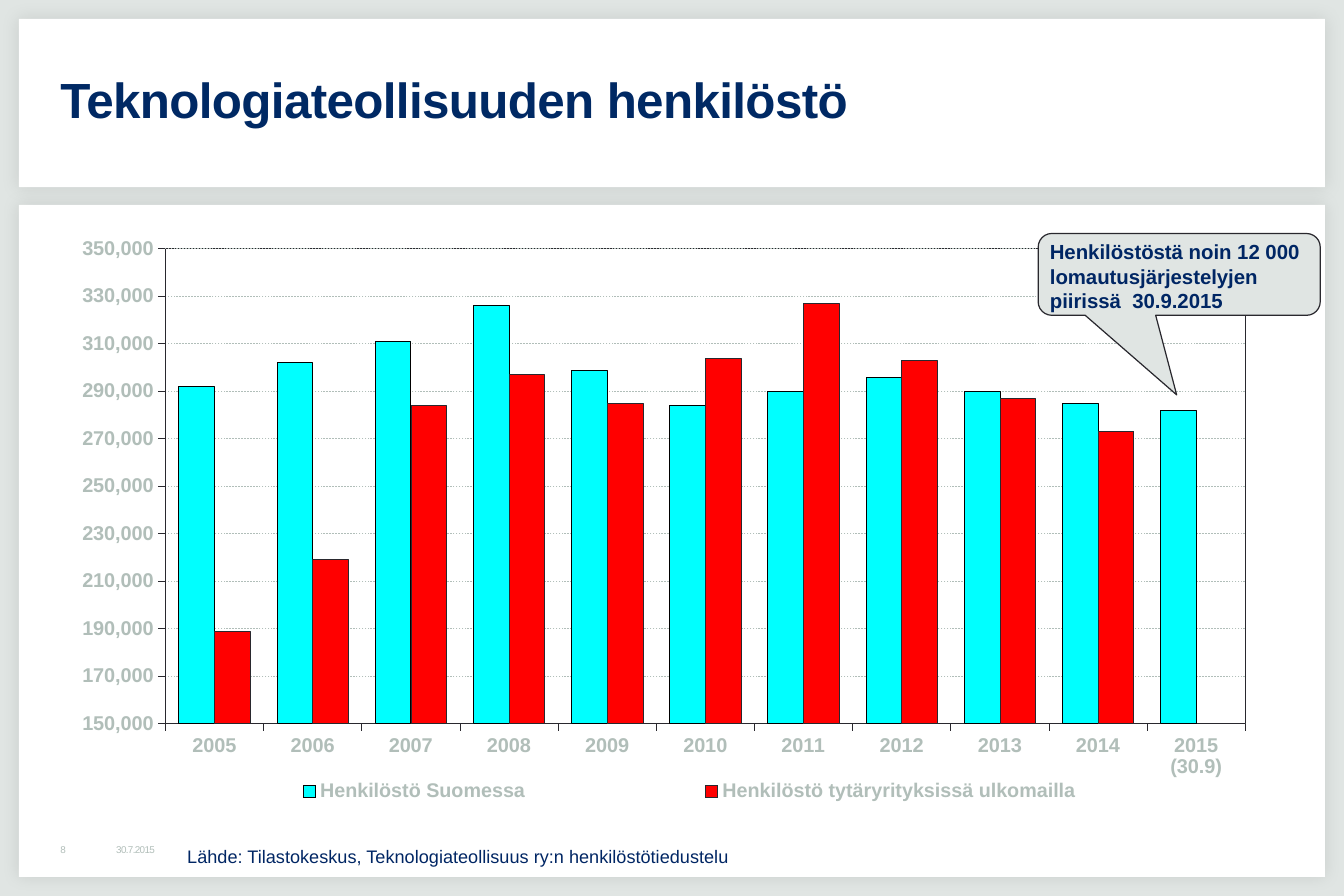
from lxml import etree
from pptx import Presentation
from pptx.chart.data import CategoryChartData
from pptx.dml.color import RGBColor
from pptx.enum.chart import XL_CHART_TYPE, XL_LEGEND_POSITION, XL_TICK_MARK
from pptx.enum.dml import MSO_LINE
from pptx.enum.shapes import MSO_SHAPE
from pptx.enum.text import MSO_ANCHOR, MSO_AUTO_SIZE, PP_ALIGN
from pptx.oxml import parse_xml
from pptx.oxml.ns import nsdecls, qn
from pptx.util import Inches, Pt

RECT = MSO_SHAPE.RECTANGLE
BUBBLE = MSO_SHAPE.ROUNDED_RECTANGULAR_CALLOUT
COLUMNS = XL_CHART_TYPE.COLUMN_CLUSTERED
BOTTOM = XL_LEGEND_POSITION.BOTTOM
OUT, NONE = XL_TICK_MARK.OUTSIDE, XL_TICK_MARK.NONE
DASH = MSO_LINE.DASH
TOP, MIDDLE = MSO_ANCHOR.TOP, MSO_ANCHOR.MIDDLE
FIXED, GROW = MSO_AUTO_SIZE.NONE, MSO_AUTO_SIZE.SHAPE_TO_FIT_TEXT
LEFT = PP_ALIGN.LEFT

FONT = "Arial"
COLORS = {
    "back": "E0E5E3", "panel": "FFFFFF", "title": "002964", "text": "002664",
    "muted": "B1BEB9", "line": "29282E", "black": "000000",
    "home": "00FFFF", "abroad": "FF0000",
}
YEARS = [str(year) for year in range(2005, 2015)] + ["2015 (30.9)"]
STAFF = [
    ("Henkilöstö Suomessa", "home", "black",
     [292, 302, 311, 326, 299, 284, 290, 296, 290, 285, 282]),
    ("Henkilöstö tytäryrityksissä ulkomailla", "abroad", "line",
     [189, 219, 284, 297, 285, 304, 327, 303, 287, 273, None]),
]


def color(name):
    return RGBColor.from_string(COLORS[name])


def inches(box):
    return [Inches(side) for side in box]


def style(font, size, name, bold=False):
    font.name, font.size, font.bold = FONT, Pt(size), bold
    font.color.rgb = color(name)


def stroke(line, name, width):
    line.color.rgb = color(name)
    line.width = Pt(width)


def write(frame, lines, size, name, bold=False, pads=(0.1, 0.05, 0.1, 0.05),
          anchor=TOP, fit=FIXED, track=0):
    frame.word_wrap = True
    frame.auto_size = fit
    frame.vertical_anchor = anchor
    (frame.margin_left, frame.margin_top,
     frame.margin_right, frame.margin_bottom) = inches(pads)
    for i, line in enumerate(lines):
        para = frame.add_paragraph() if i else frame.paragraphs[0]
        para.alignment = LEFT
        run = para.add_run()
        run.text = line
        style(run.font, size, name, bold)
        if track:
            run.font._element.set("spc", str(track))


def add_panel(slide, box):
    panel = slide.shapes.add_shape(RECT, *inches(box))
    panel.fill.solid()
    panel.fill.fore_color.rgb = color("panel")
    panel.line.fill.background()
    panel.shadow.inherit = False
    glow = panel._element.spPr.find(qn("a:effectLst"))
    glow.append(parse_xml(
        f'<a:outerShdw {nsdecls("a")} blurRad="127000" dist="0" dir="2700000">'
        f'<a:srgbClr val="{COLORS["black"]}"><a:alpha val="10000"/></a:srgbClr>'
        '</a:outerShdw>'))


def add_title(slide, box):
    title = slide.shapes.title
    title.left, title.top, title.width, title.height = inches(box)
    write(title.text_frame, ["Teknologiateollisuuden henkilöstö"], 30, "title",
          True, (0.04, 0.05, 0.1, 0.05), MIDDLE, track=-40)
    title.text_frame.paragraphs[0].line_spacing = 0.95
    slide.shapes._spTree.append(title._element)


def set_place(parent, index, box, inner=False):
    for old in parent.findall(qn("c:layout")):
        parent.remove(old)
    layout = etree.Element(qn("c:layout"))
    manual = etree.SubElement(layout, qn("c:manualLayout"))
    parts = [("layoutTarget", "inner")] if inner else []
    parts += [("xMode", "edge"), ("yMode", "edge")]
    parts += zip("xywh", box)
    for tag, value in parts:
        etree.SubElement(manual, qn(f"c:{tag}")).set("val", str(value))
    parent.insert(index, layout)


def add_chart(slide, box):
    data = CategoryChartData(number_format="#,##0")
    data.categories = YEARS
    for name, _, _, counts in STAFF:
        data.add_series(name, [n and n * 1000 for n in counts])
    chart = slide.shapes.add_chart(COLUMNS, *inches(box), data).chart
    chart.has_title = False
    style(chart.font, 12.1, "line", True)
    plot = chart.plots[0]
    plot.gap_width, plot.overlap = 75, 0
    plot.vary_by_categories = False
    for series, (_, fill, edge, _) in zip(plot.series, STAFF):
        series.format.fill.solid()
        series.format.fill.fore_color.rgb = color(fill)
        stroke(series.format.line, edge, 0.25)
        series.invert_if_negative = False
    for axis in (chart.category_axis, chart.value_axis):
        axis.major_tick_mark, axis.minor_tick_mark = OUT, NONE
        style(axis.tick_labels.font, 12.1, "muted", True)
        stroke(axis.format.line, "line", 0.25)
    scale = chart.value_axis
    scale.minimum_scale, scale.maximum_scale = 150000, 350000
    scale.major_unit = 20000
    scale.tick_labels.number_format = "#,##0"
    scale.tick_labels.number_format_is_linked = False
    scale.has_major_gridlines = True
    grid = scale.major_gridlines.format.line
    stroke(grid, "muted", 0.25)
    grid.dash_style = DASH
    chart.has_legend = True
    legend = chart.legend
    legend.position = BOTTOM
    legend.include_in_layout = False
    style(legend.font, 12, "muted", True)
    set_place(legend._element, 1, (0.06, 0.94, 0.91, 0.05))
    area = chart._chartSpace.chart.plotArea
    set_place(area, 0, (0.089, 0.042, 0.877, 0.808), True)
    area.append(parse_xml(
        f'<c:spPr {nsdecls("c", "a")}><a:noFill/><a:ln w="3175"><a:solidFill>'
        f'<a:srgbClr val="{COLORS["line"]}"/></a:solidFill></a:ln></c:spPr>'))


def add_note(slide, box):
    left, top, width, height = box
    note = slide.shapes.add_shape(BUBBLE, *inches(box))
    for i, value in enumerate((-0.009, 1.473, 0.167)):
        note.adjustments[i] = value
    note.fill.solid()
    note.fill.fore_color.rgb = color("back")
    stroke(note.line, "line", 0.75)
    note.shadow.inherit = False
    label = slide.shapes.add_textbox(
        *inches((left, top, width + 0.23, height + 0.04)))
    write(label.text_frame,
          ["Henkilöstöstä noin 12 000", "lomautusjärjestelyjen",
           "piirissä  30.9.2015"], 12.4, "text", True, fit=GROW)


def add_foot(slide, box):
    left, top, width, height = box
    pads = (0.04,) * 4
    for shift, span, text in ((0, 0.47, "8"), (0.47, 1.42, "30.7.2015")):
        mark = slide.shapes.add_textbox(
            *inches((left + shift, top, span, 0.16)))
        write(mark.text_frame, [text], 6, "muted", pads=pads,
              anchor=MIDDLE, track=-40)
    source = slide.shapes.add_textbox(
        *inches((left + 1.03, top, width - 1.03, height)))
    write(source.text_frame,
          ["Lähde: Tilastokeskus, Teknologiateollisuus ry:n henkilöstötiedustelu"],
          11, "text", pads=(0.08, 0.04, 0.08, 0.04), fit=GROW)


def main():
    deck = Presentation()
    deck.slide_width, deck.slide_height = Inches(11.34), Inches(7.56)
    slide = deck.slides.add_slide(deck.slide_layouts[5])
    slide.background.fill.solid()
    slide.background.fill.fore_color.rgb = color("back")
    add_panel(slide, (0.16, 0.16, 11.02, 1.42))
    add_panel(slide, (0.16, 1.73, 11.02, 5.67))
    add_title(slide, (0.47, 0.31, 10.4, 1.1))
    add_chart(slide, (0.47, 1.89, 10.39, 4.96))
    add_foot(slide, (0.47, 7.09, 7.02, 0.27))
    add_note(slide, (8.76, 1.97, 2.38, 0.69))
    deck.save("out.pptx")


if __name__ == "__main__":
    main()
